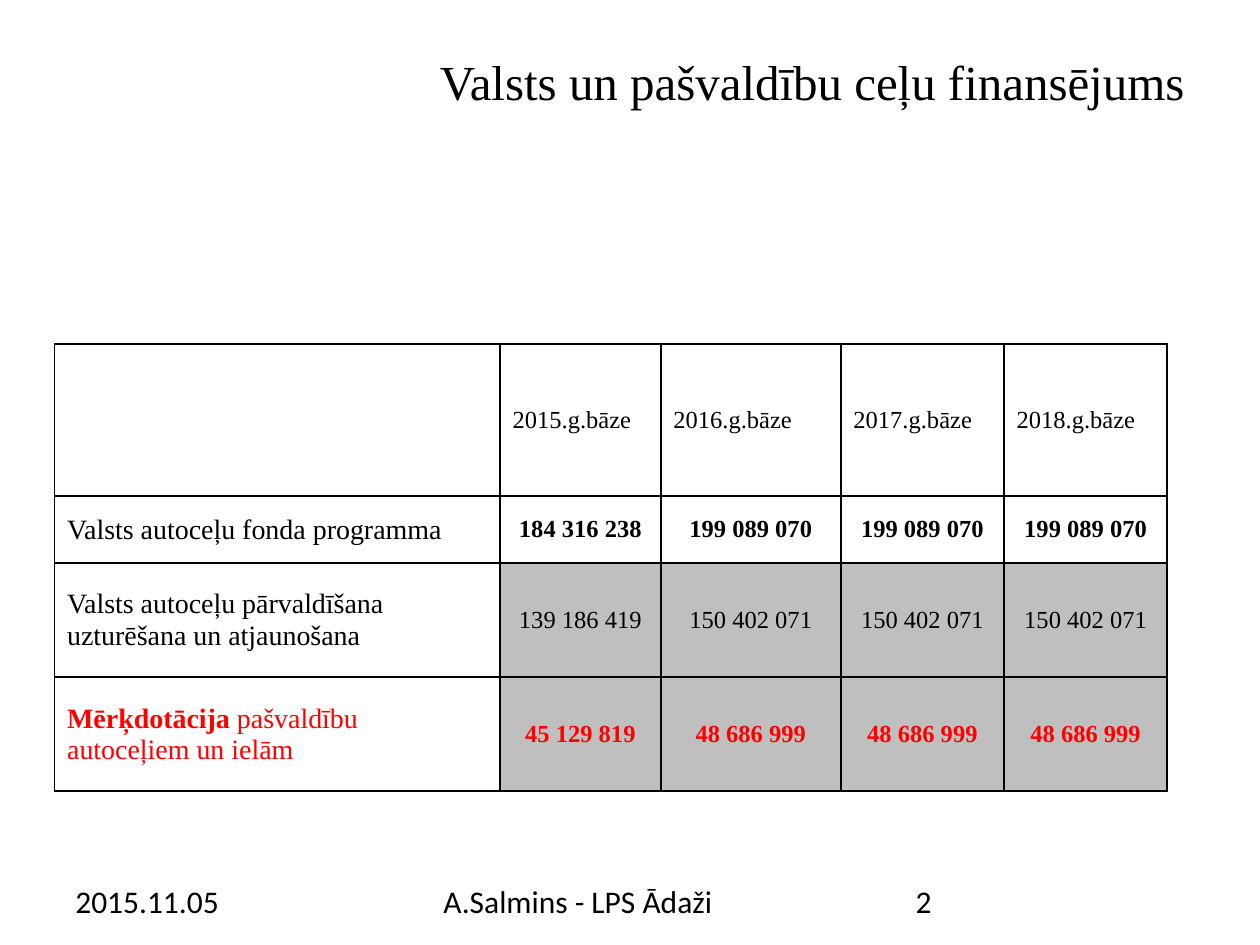
from dataclasses import dataclass

import pptx
import pptx.dml.color
import pptx.enum.text
import pptx.oxml
import pptx.oxml.ns
import pptx.util
from pptx.util import Cm, Pt

RGB = pptx.dml.color.RGBColor.from_string
ALIGN = pptx.enum.text.PP_ALIGN
MIDDLE = pptx.enum.text.MSO_ANCHOR.MIDDLE


@dataclass(frozen=True)
class Theme:
    serif: str = "Times New Roman"
    sans: str = "Calibri"
    black: str = "000000"
    red: str = "FF0000"
    grey: str = "BFBFBF"
    title: int = 28
    footer: int = 18
    label: int = 16
    number: int = 14


theme = Theme()


def style(p, font, size, color=theme.black, align=ALIGN.LEFT):
    p.font.name, p.font.size = font, Pt(size)
    p.font.color.rgb = RGB(color)
    p.alignment = align


def add_borders(cell):
    for side in ("L", "R", "T", "B"):
        cell._tc.get_or_add_tcPr().append(pptx.oxml.parse_xml(
            f'<a:ln{side} {pptx.oxml.ns.nsdecls("a")} w="{Pt(1)}"><a:solidFill>'
            f'<a:srgbClr val="{theme.black}"/></a:solidFill></a:ln{side}>'))


prs = pptx.Presentation()
prs.slide_width, prs.slide_height = Cm(25.4), Cm(19.05)
s = prs.slides.add_slide(prs.slide_layouts[6])

# Title
tf = s.shapes.add_textbox(Cm(1.27), Cm(0.76), Cm(22.86), Cm(3.18)).text_frame
tf.word_wrap = True
tf.margin_top = Cm(0.28)
p = tf.paragraphs[0]
p.text = "Valsts un pašvaldību ceļu finansējums"
style(p, theme.serif, theme.title, align=ALIGN.RIGHT)

# Funding table: label runs, yearly values, bold values, colour, fill
header = [f"{year}.g.bāze" for year in range(2015, 2019)]
rows = [
    ([""], header, False, theme.black, None),
    (["Valsts autoceļu fonda programma"],
     ["184 316 238"] + ["199 089 070"] * 3, True, theme.black, None),
    (["Valsts autoceļu pārvaldīšana uzturēšana un atjaunošana"],
     ["139 186 419"] + ["150 402 071"] * 3, False, theme.black, theme.grey),
    (["Mērķdotācija", " pašvaldību autoceļiem un ielām"],
     ["45 129 819"] + ["48 686 999"] * 3, True, theme.red, theme.grey),
]
col_widths = [8.98, 3.24, 3.63, 3.29, 3.29]
row_heights = [3.07, 1.35, 2.3, 2.3]
table = s.shapes.add_table(len(rows), len(col_widths), Cm(1.1), Cm(6.93),
                           Cm(sum(col_widths)), Cm(sum(row_heights))).table
table.first_row = table.horz_banding = False
for column, width in zip(table.columns, col_widths):
    column.width = Cm(width)
for row, height in zip(table.rows, row_heights):
    row.height = Cm(height)

for i, (label, values, bold, color, fill) in enumerate(rows):
    for j, runs in enumerate([label] + [[value] for value in values]):
        cell = table.cell(i, j)
        cell.vertical_anchor = MIDDLE
        add_borders(cell)
        if fill and j:
            cell.fill.solid()
            cell.fill.fore_color.rgb = RGB(fill)
        else:
            cell.fill.background()
        p = cell.text_frame.paragraphs[0]
        style(p, theme.serif, theme.number if j else theme.label, color,
              ALIGN.CENTER if i and j else ALIGN.LEFT)
        for k, text in enumerate(runs):
            r = p.add_run()
            r.text = text
            r.font.bold = bold if j else len(runs) > 1 and k == 0

# Footer: date, author, slide number
for left, width, text in [(1.27, 5.92, "2015.11.05"),
                          (8.69, 8.05, "A.Salmins - LPS Ādaži"),
                          (18.21, 5.92, "2")]:
    tf = s.shapes.add_textbox(Cm(left), Cm(17.65), Cm(width), Cm(1.02)).text_frame
    tf.word_wrap = True
    tf.vertical_anchor = MIDDLE
    p = tf.paragraphs[0]
    p.text = text
    style(p, theme.sans, theme.footer)

prs.save("out.pptx")
